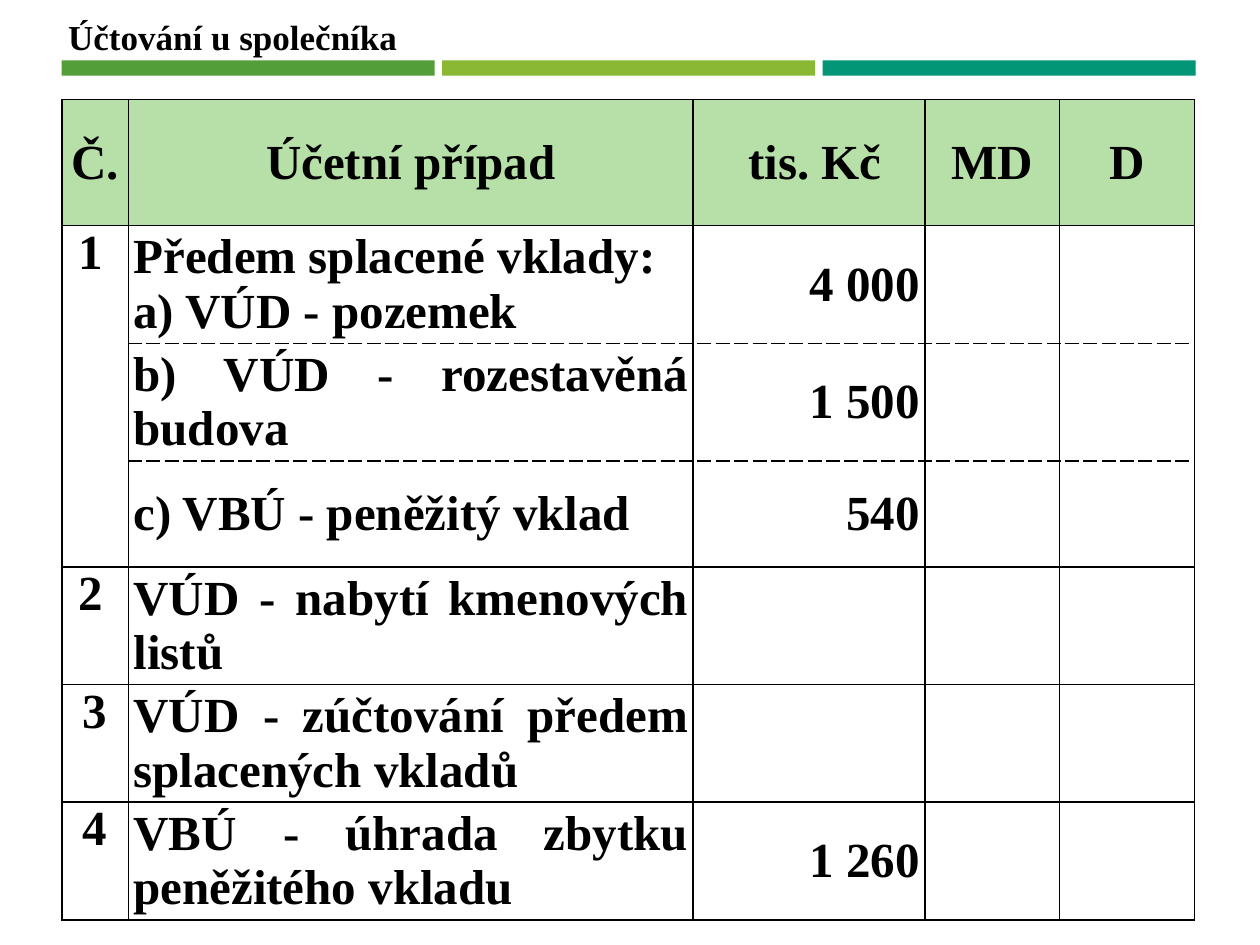
from lxml.etree import SubElement
from pptx import Presentation
from pptx.dml.color import RGBColor
from pptx.enum.shapes import MSO_SHAPE as Shape
from pptx.enum.text import MSO_ANCHOR as Anchor, MSO_AUTO_SIZE as AutoSize, PP_ALIGN as Align
from pptx.oxml.ns import qn
from pptx.util import Inches, Pt

COLORS = {"ink": "000000", "header": "B7E0A8", "green": "549E39", "lime": "8AB833", "teal": "029676"}
FONT = "Times New Roman"
LEFT = 0.49
COLUMNS = [0.53, 4.48, 1.84, 1.07, 1.07]
ROWS = [1, 0.93, 0.93, 0.84, 0.93, 0.93, 0.93]
ENTRIES = [
    ["Č.", "Účetní případ", " tis. Kč", "MD", "D"],
    [" 1", "Předem splacené vklady:\na) VÚD - pozemek", "4 000", "", ""],
    ["", "b) VÚD - rozestavěná budova", "1 500", "", ""],
    ["", "c) VBÚ - peněžitý vklad", "540", "", ""],
    [" 2", "VÚD - nabytí kmenových listů ", "", "", ""],
    ["3", "VÚD - zúčtování předem splacených vkladů", "", "", ""],
    ["4", "VBÚ - úhrada zbytku peněžitého vkladu ", "1 260", "", ""],
]
COLUMN_ALIGN = [Align.LEFT, Align.JUSTIFY, Align.RIGHT, Align.CENTER, Align.CENTER]
CENTERED_NUMBERS = ("3", "4")
DASHED_BELOW = (1, 2)


def color(name):
    """Return the named colour of the palette."""
    return RGBColor.from_string(COLORS[name])


def write(frame, text, size=28, align=Align.LEFT):
    """Write bold text, one paragraph a line."""
    frame.text = text
    for paragraph in frame.paragraphs:
        paragraph.alignment = align
        font = paragraph.font
        for run in paragraph.runs:
            font = run.font
        font.name, font.size, font.bold = FONT, Pt(size), True
        font.color.rgb = color("ink")


def add_heading(slide):
    """Place the slide title above the bands."""
    heading = slide.shapes.title
    heading.left, heading.top = Inches(0.44), Inches(0.07)
    heading.width, heading.height = Inches(2.83), Inches(0.44)
    frame = heading.text_frame
    write(frame, "Účtování u společníka", size=20)
    frame.word_wrap = False
    frame.auto_size = AutoSize.SHAPE_TO_FIT_TEXT
    frame.vertical_anchor = Anchor.TOP


def add_bands(slide):
    """Draw the three equally spaced colour bands."""
    width, gap = 2.96, 0.06
    for index, name in enumerate(("green", "lime", "teal")):
        band = slide.shapes.add_shape(
            Shape.RECTANGLE, Inches(LEFT + index * (width + gap)), Inches(0.48), Inches(width), Inches(0.12))
        band.shadow.inherit = False
        band.fill.solid()
        band.fill.fore_color.rgb = color(name)
        band.line.fill.background()


def set_borders(cell, dashed):
    """Rule the four sides of a cell, dashing the given ones."""
    properties = cell._tc.get_or_add_tcPr()
    for index, side in enumerate(("lnL", "lnR", "lnT", "lnB")):
        line = SubElement(properties, qn(f"a:{side}"), w=str(Pt(1)))
        fill = SubElement(line, qn("a:solidFill"))
        SubElement(fill, qn("a:srgbClr"), val=COLORS["ink"])
        SubElement(line, qn("a:prstDash"), val="dash" if side in dashed else "solid")
        properties.insert(index, line)


def format_cell(cell, row, column):
    """Fill in one cell of the journal."""
    text = ENTRIES[row][column]
    header = row == 0
    centered = header or text in CENTERED_NUMBERS
    write(cell.text_frame, text, align=Align.CENTER if centered else COLUMN_ALIGN[column])
    cell.margin_left = cell.margin_right = Inches(0.04)
    cell.margin_top = cell.margin_bottom = 0
    cell.vertical_anchor = Anchor.MIDDLE if header or column else Anchor.TOP
    if header:
        cell.fill.solid()
        cell.fill.fore_color.rgb = color("header")
    else:
        cell.fill.background()
    dashed = set()
    if column and row in DASHED_BELOW:
        dashed.add("lnB")
    if column and row - 1 in DASHED_BELOW:
        dashed.add("lnT")
    set_borders(cell, dashed)


def add_journal(slide):
    """Add the table of accounting entries."""
    journal = slide.shapes.add_table(
        len(ROWS), len(COLUMNS), Inches(LEFT), Inches(0.79), Inches(sum(COLUMNS)), Inches(sum(ROWS))).table
    journal.horz_banding = False
    for column, width in zip(journal.columns, COLUMNS):
        column.width = Inches(width)
    for row, height in zip(journal.rows, ROWS):
        row.height = Inches(height)
    for row in range(len(ROWS)):
        for column in range(len(COLUMNS)):
            format_cell(journal.cell(row, column), row, column)
    journal.cell(1, 0).merge(journal.cell(3, 0))


def main():
    """Build and save the slide."""
    deck = Presentation()
    deck.slide_width, deck.slide_height = Inches(10), Inches(7.5)
    slide = deck.slides.add_slide(deck.slide_layouts[5])
    add_bands(slide)
    add_heading(slide)
    add_journal(slide)
    deck.save("out.pptx")


if __name__ == "__main__":
    main()
